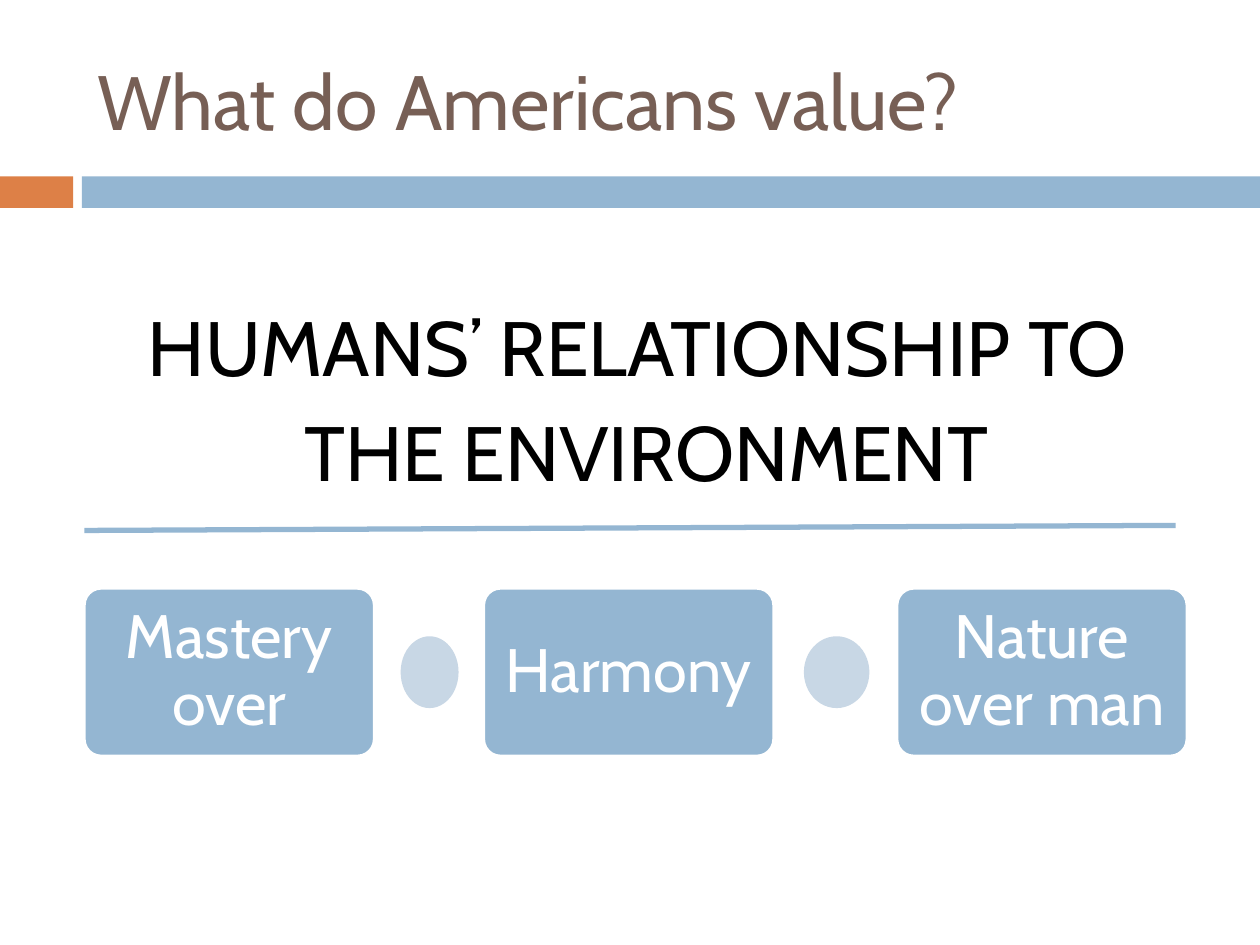
from dataclasses import dataclass

from lxml.etree import SubElement
from pptx import Presentation
from pptx.dml.color import RGBColor
from pptx.enum.shapes import MSO_CONNECTOR as Connector, MSO_SHAPE as Shape
from pptx.enum.text import MSO_ANCHOR as Anchor, MSO_AUTO_SIZE as AutoSize, PP_ALIGN as Align
from pptx.oxml.ns import qn
from pptx.util import Inches, Pt

FONT = "Cabin"
BLUE, PALE_BLUE, ORANGE = "94B6D2", "C8D7E5", "DD8047"
BROWN, BLACK, WHITE = "775F55", "000000", "FFFFFF"


@dataclass
class Area:
    left: float
    top: float
    width: float
    height: float

    def lengths(self) -> list:
        return [Inches(v) for v in (self.left, self.top, self.width, self.height)]


@dataclass
class Value:
    text: str
    left: float


@dataclass
class Dot:
    left: float
    width: float


def color(value: str) -> RGBColor:
    return RGBColor.from_string(value)


def write(frame, lines: list[str], size: float, fill: str, align: Align) -> None:
    """Put one paragraph per line into the frame and format its runs."""
    frame.word_wrap = True
    frame.text = "\n".join(lines)
    for para in frame.paragraphs:
        para.alignment = align
        for span in para.runs:
            span.font.name = FONT
            span.font.size = Pt(size)
            span.font.color.rgb = color(fill)


def add_box(page, kind: Shape, area: Area, fill: str):
    box = page.shapes.add_shape(kind, *area.lengths())
    box.shadow.inherit = False
    box.fill.solid()
    box.fill.fore_color.rgb = color(fill)
    box.line.fill.background()
    return box


def add_value(page, value: Value) -> None:
    box = add_box(page, Shape.ROUNDED_RECTANGLE, Area(value.left, 4.67, 2.3, 1.33), BLUE)
    box.adjustments[0] = 0.1
    box.line.color.rgb = color(WHITE)
    box.line.width = Pt(1.5)
    frame = box.text_frame
    write(frame, [value.text], 35, WHITE, Align.CENTER)
    frame.vertical_anchor = Anchor.MIDDLE
    # Narrow side margins keep "Harmony" and "over man" on one line each
    frame.margin_left = frame.margin_right = Inches(0.08)
    frame.margin_top = frame.margin_bottom = Inches(0.1)
    frame.paragraphs[0].line_spacing = 0.9


def add_rule(page) -> None:
    rule = page.shapes.add_connector(
        Connector.STRAIGHT, Inches(0.67), Inches(4.21), Inches(9.33), Inches(4.17))
    rule.line.color.rgb = color(BLUE)
    rule.line.width = Pt(3)
    SubElement(rule._element.spPr, qn("a:effectLst"))


def main() -> None:
    deck = Presentation()
    deck.slide_width, deck.slide_height = Inches(10), Inches(7.5)
    page = deck.slides.add_slide(deck.slide_layouts[5])

    # Title
    title = page.shapes.title
    title.left, title.top, title.width, title.height = Area(0.67, 0.25, 8.92, 1.08).lengths()
    write(title.text_frame, ["What do Americans value?"], 44, BROWN, Align.LEFT)
    title.text_frame.auto_size = AutoSize.NONE
    title.text_frame.vertical_anchor = Anchor.MIDDLE

    # Band under the title
    add_box(page, Shape.RECTANGLE, Area(0, 1.4, 0.58, 0.25), ORANGE)
    add_box(page, Shape.RECTANGLE, Area(0.65, 1.4, 9.35, 0.25), BLUE)

    # Topic
    topic = page.shapes.add_textbox(*Area(0.67, 2.33, 8.92, 1.75).lengths())
    write(topic.text_frame, ["HUMANS’ RELATIONSHIP TO ", "THE ENVIRONMENT"],
          44, BLACK, Align.CENTER)
    topic.text_frame.paragraphs[1].space_before = Pt(7)
    add_rule(page)

    # Range of values, with dots between them
    for value in (Value("Mastery over", 0.67), Value("Harmony", 3.84),
                  Value("Nature over man", 7.12)):
        add_value(page, value)
    for dot in (Dot(3.18, 0.46), Dot(6.38, 0.52)):
        add_box(page, Shape.FLOWCHART_CONNECTOR, Area(dot.left, 5.05, dot.width, 0.57), PALE_BLUE)

    deck.save("out.pptx")


if __name__ == "__main__":
    main()
